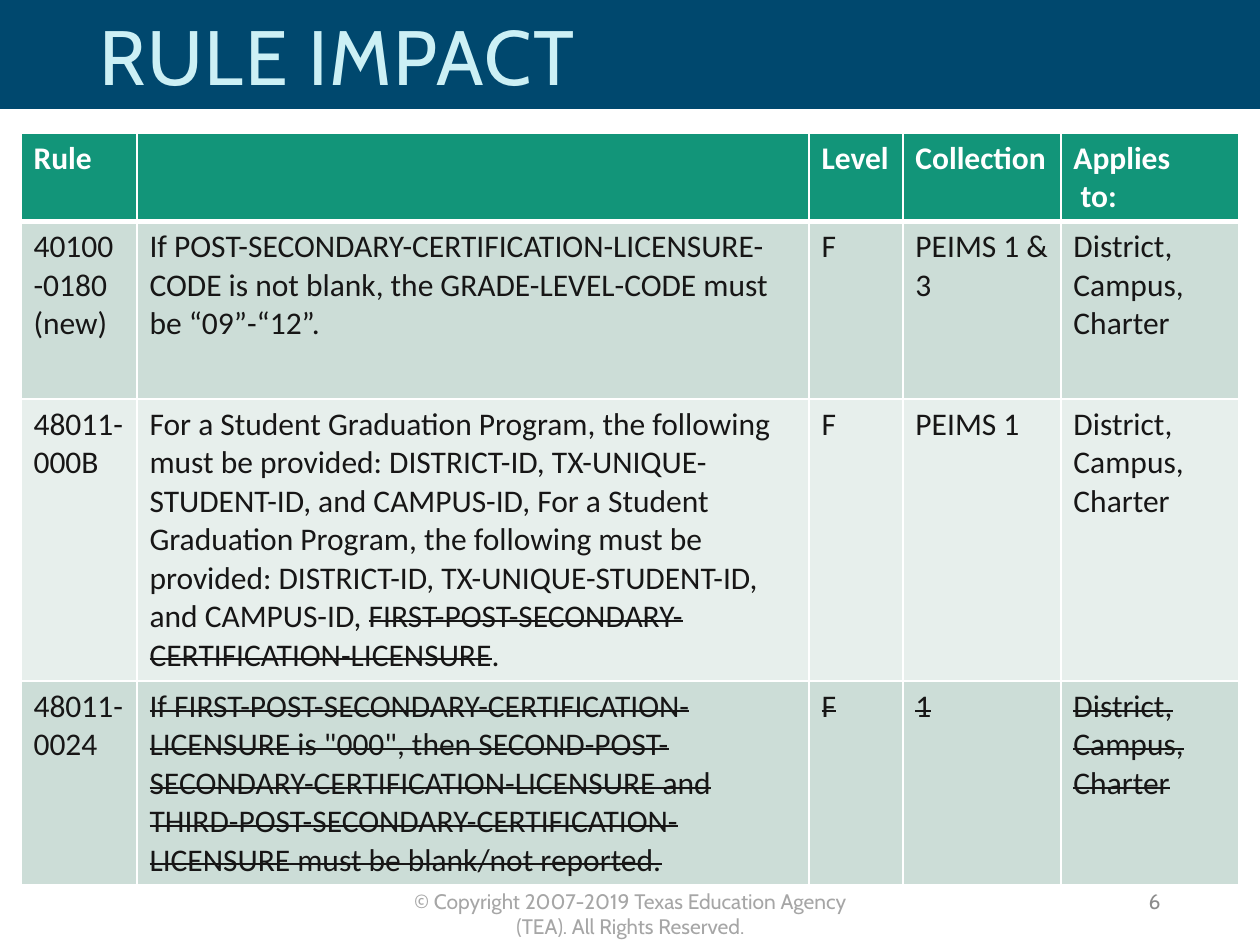
from lxml.etree import SubElement
from pptx import Presentation
from pptx.dml.color import RGBColor
from pptx.enum.shapes import MSO_SHAPE
from pptx.enum.text import MSO_ANCHOR, PP_ALIGN
from pptx.oxml import parse_xml
from pptx.oxml.ns import nsdecls, qn
from pptx.util import Emu, Pt

THEME = {
    "banner": "00486E", "title": "CCF0F5", "header": "129579", "white": "FFFFFF",
    "bands": ("CCDDD7", "E7EFEC"), "body": "171616",
    "footer": "A6A6A6", "number": "8C8C8C",
    "heading_font": "Cabin", "table_font": "Calibri",
    "title_size": 44, "table_size": 18, "footer_size": 12,
}
EMU_PER_PX = 914400 / 126


def px(*lengths):
    """Turn pixel lengths into a list of EMU lengths."""
    return [Emu(round(length * EMU_PER_PX)) for length in lengths]


def add_run(paragraph, text, font_name, size, color, bold=False):
    run = paragraph.add_run()
    run.text = text
    run.font.name = font_name
    run.font.size = Pt(size)
    run.font.bold = bold
    run.font.color.rgb = RGBColor.from_string(color)
    return run


presentation = Presentation()
presentation.slide_width, presentation.slide_height = px(1260, 945)
slide = presentation.slides.add_slide(presentation.slide_layouts[6])

# Banner
banner = slide.shapes.add_shape(MSO_SHAPE.RECTANGLE, *px(0, 0, 1260, 109))
banner.shadow.inherit = False
banner.fill.solid()
banner.fill.fore_color.rgb = RGBColor.from_string(THEME["banner"])
banner.line.fill.background()

# Title, copyright line and slide number
captions = [
    ("RULE IMPACT", (87, 6, 1008, 110), "title", PP_ALIGN.LEFT, MSO_ANCHOR.MIDDLE),
    ("© Copyright 2007-2019 Texas Education Agency (TEA). All Rights Reserved.",
     (383, 882, 495, 38), "footer", PP_ALIGN.CENTER, MSO_ANCHOR.TOP),
    ("6", (890, 876, 283, 50), "number", PP_ALIGN.RIGHT, MSO_ANCHOR.MIDDLE),
]
for text, box, role, alignment, anchor in captions:
    frame = slide.shapes.add_textbox(*px(*box)).text_frame
    frame.word_wrap = True
    frame.vertical_anchor = anchor
    paragraph = frame.paragraphs[0]
    paragraph.alignment = alignment
    size = THEME["title_size" if role == "title" else "footer_size"]
    run = add_run(paragraph, text, THEME["heading_font"], size, THEME[role])
    if role == "title":
        paragraph.line_spacing = 0.9
        run.font._element.set("spc", "100")

# Each cell is a list of paragraphs; text between tildes is struck through
APPLIES_TO = ["District, Campus,", "Charter"]
PROGRAM = ("For a Student Graduation Program, the following must be provided: "
           "DISTRICT-ID, TX-UNIQUE-STUDENT-ID, and CAMPUS-ID, ")
rules = [
    [["Rule"], [], ["Level"], ["Collection"], ["Applies", " to:"]],
    [["40100 -0180 (new)"],
     ["If POST-SECONDARY-CERTIFICATION-LICENSURE-CODE is not blank, "
      "the GRADE-LEVEL-CODE must be “09”-“12”."],
     ["F"], ["PEIMS 1 & 3"], APPLIES_TO],
    [["48011-000B"],
     [PROGRAM * 2 + "~FIRST-POST-SECONDARY-CERTIFICATION-LICENSURE~."],
     ["F"], ["PEIMS 1"], APPLIES_TO],
    [["48011-0024"],
     ['~If FIRST-POST-SECONDARY-CERTIFICATION-LICENSURE is "000", then '
      "SECOND-POST-SECONDARY-CERTIFICATION-LICENSURE and "
      "THIRD-POST-SECONDARY-CERTIFICATION-LICENSURE must be blank/not reported.~"],
     ["~F~"], ["~1~"], [f"~{line}~" for line in APPLIES_TO]],
]
column_widths = px(116, 672, 94, 158, 178)
row_heights = px(88, 178, 282, 204)

table = slide.shapes.add_table(
    len(rules), len(column_widths), *px(21, 133),
    sum(column_widths), sum(row_heights)).table
for column, width in zip(table.columns, column_widths):
    column.width = width
for row, height in zip(table.rows, row_heights):
    row.height = height

for row_index, rule in enumerate(rules):
    is_header = row_index == 0
    fill = THEME["header"] if is_header else THEME["bands"][(row_index - 1) % 2]
    color = THEME["white"] if is_header else THEME["body"]
    for column_index, lines in enumerate(rule):
        cell = table.cell(row_index, column_index)
        cell.fill.solid()
        cell.fill.fore_color.rgb = RGBColor.from_string(fill)
        properties = cell._tc.get_or_add_tcPr()
        for position, side in enumerate(("lnL", "lnR", "lnT", "lnB")):
            under_header = (row_index, side) in ((0, "lnB"), (1, "lnT"))
            border = parse_xml(
                f'<a:{side} {nsdecls("a")} w="{Pt(3 if under_header else 1)}"/>')
            solid = SubElement(border, qn("a:solidFill"))
            SubElement(solid, qn("a:srgbClr")).set("val", THEME["white"])
            properties.insert(position, border)
        frame = cell.text_frame
        for line_index, line in enumerate(lines):
            paragraph = frame.add_paragraph() if line_index else frame.paragraphs[0]
            for part_index, part in enumerate(line.split("~")):
                if part:
                    run = add_run(paragraph, part, THEME["table_font"],
                                  THEME["table_size"], color, is_header)
                    if part_index % 2:
                        run.font._element.set("strike", "sngStrike")

presentation.save("out.pptx")
